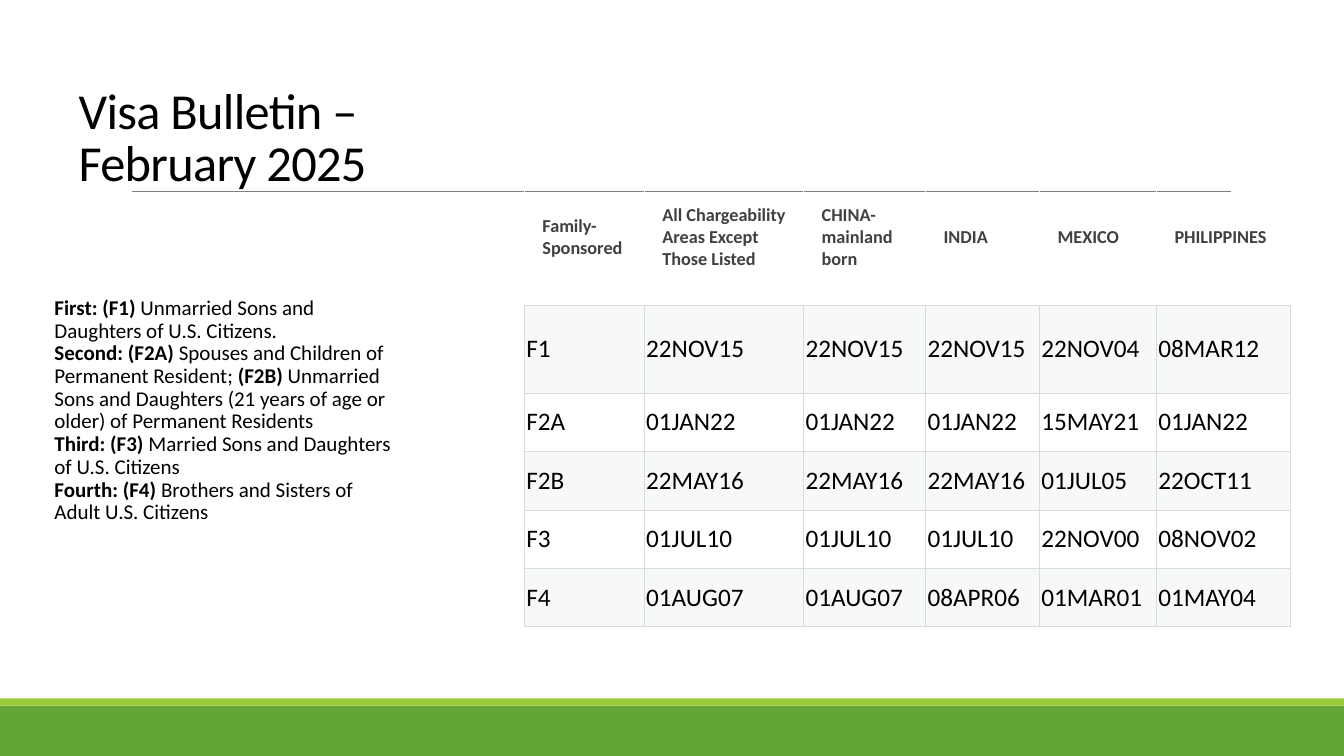
from pptx import Presentation
from pptx import util as u
from pptx.dml.color import RGBColor
from pptx.enum import shapes, text
from pptx.oxml.ns import qn
from lxml import etree

HUES = {"green": "63A537", "lime": "99CB38", "rule": "808080", "ink": "000000",
        "head": "404040", "edge": "D8DCDC", "band": "D8DEDC"}

COLS = [1.19, 1.58, 1.21, 1.13, 1.16, 1.33]
ROWS = [1.35, 0.87, 0.58, 0.58, 0.58, 0.58]
DATES = [
    ["Family-\vSponsored", "All Chargeability\vAreas Except\vThose Listed",
     "CHINA-mainland\vborn", "INDIA", "MEXICO", "PHILIPPINES"],
    ["F1", "22NOV15", "22NOV15", "22NOV15", "22NOV04", "08MAR12"],
    ["F2A", "01JAN22", "01JAN22", "01JAN22", "15MAY21", "01JAN22"],
    ["F2B", "22MAY16", "22MAY16", "22MAY16", "01JUL05", "22OCT11"],
    ["F3", "01JUL10", "01JUL10", "01JUL10", "22NOV00", "08NOV02"],
    ["F4", "01AUG07", "01AUG07", "08APR06", "01MAR01", "01MAY04"],
]
GROUPS = [
    [("First: (F1)", True), (" Unmarried Sons and Daughters of U.S. Citizens.", False)],
    [("Second: (F2A)", True), (" Spouses and Children of Permanent Resident; ", False),
     ("(F2B)", True),
     (" Unmarried Sons and Daughters (21 years of age or older) of Permanent Residents", False)],
    [("Third: (F3)", True), (" Married Sons and Daughters of U.S. Citizens", False)],
    [("Fourth: (F4)", True), (" Brothers and Sisters of Adult U.S. Citizens", False)],
]


def color(name):
    return RGBColor.from_string(HUES[name])


def write(frame, paras, size, hue="ink", space=1.0, track=0):
    frame.word_wrap = True
    for i, parts in enumerate(paras):
        para = frame.paragraphs[0] if i == 0 else frame.add_paragraph()
        para.alignment = text.PP_ALIGN.LEFT
        para.line_spacing = space
        para.space_before = para.space_after = u.Pt(0)
        for words, bold in parts:
            for j, line in enumerate(words.split("\v")):
                if j:
                    para.add_line_break()
                run = para.add_run()
                run.text = line
                run.font.name = "Calibri"
                run.font.size = u.Pt(size)
                run.font.bold = bold
                run.font.color.rgb = color(hue)
                if track:
                    run.font._element.set("spc", str(track))


def inset(item, left, top, right, bottom):
    item.margin_left, item.margin_top = u.Inches(left), u.Inches(top)
    item.margin_right, item.margin_bottom = u.Inches(right), u.Inches(bottom)


def add_bar(slide, box, hue):
    bar = slide.shapes.add_shape(shapes.MSO_SHAPE.RECTANGLE, *map(u.Inches, box))
    bar.shadow.inherit = False
    bar.fill.solid()
    bar.fill.fore_color.rgb = color(hue)
    bar.line.fill.background()


def add_rule(slide, left, right, y):
    rule = slide.shapes.add_connector(
        shapes.MSO_CONNECTOR.STRAIGHT, *map(u.Inches, (left, y, right, y)))
    rule.line.color.rgb = color("rule")
    rule.line.width = u.Pt(0.5)
    etree.SubElement(rule._element.spPr, qn("a:effectLst"))


def add_title(slide, box):
    title = slide.shapes.title
    title.left, title.top, title.width, title.height = map(u.Inches, box)
    frame = title.text_frame
    frame.auto_size = text.MSO_AUTO_SIZE.NONE
    frame.vertical_anchor = text.MSO_ANCHOR.BOTTOM
    write(frame, [[("Visa Bulletin – February 2025", False)]], 36, space=0.85, track=-50)


def add_groups(slide, box):
    frame = slide.shapes.add_textbox(*map(u.Inches, box)).text_frame
    inset(frame, 0, 0.05, 0, 0.05)
    write(frame, GROUPS, 15, space=0.9)


def add_edges(cell, sides):
    props = cell._tc.get_or_add_tcPr()
    for side in sides:
        line = etree.SubElement(props, qn("a:ln" + side), w=str(u.Pt(0.75)))
        fill = etree.SubElement(line, qn("a:solidFill"))
        etree.SubElement(fill, qn("a:srgbClr"), val=HUES["edge"])


def shade(cell, banded):
    if not banded:
        cell.fill.background()
        return
    cell.fill.solid()
    cell.fill.fore_color.rgb = color("band")
    tint = cell._tc.tcPr.find(qn("a:solidFill"))[0]
    etree.SubElement(tint, qn("a:alpha"), val="20000")


def add_dates(slide, left, top):
    box = map(u.Inches, (left, top, sum(COLS), sum(ROWS)))
    table = slide.shapes.add_table(len(ROWS), len(COLS), *box).table
    table.first_row = table.horz_banding = False
    for col, width in zip(table.columns, COLS):
        col.width = u.Inches(width)
    for r, (row, high) in enumerate(zip(table.rows, ROWS)):
        row.height = u.Inches(high)
        head = r == 0
        for cell, words in zip(row.cells, DATES[r]):
            cell.vertical_anchor = text.MSO_ANCHOR.MIDDLE
            inset(cell, *((0.18, 0.09, 0.01, 0.09) if head else (0.02,) * 4))
            write(cell.text_frame, [[(words, head)]],
                  13 if head else 18, "head" if head else "ink")
            add_edges(cell, "B" if head else "LRTB")
            shade(cell, r % 2 == 1)


def main():
    deck = Presentation()
    deck.slide_width, deck.slide_height = u.Inches(13.33), u.Inches(7.5)
    slide = deck.slides.add_slide(deck.slide_layouts.get_by_name("Title Only"))
    add_bar(slide, (0, 7, 13.33, 0.5), "green")
    add_bar(slide, (0, 6.93, 13.33, 0.07), "lime")
    add_rule(slide, 1.31, 12.21, 1.9)
    add_title(slide, (0.68, -0.35, 3.37, 2.3))
    add_groups(slide, (0.54, 2.9, 3.37, 3.65))
    add_dates(slide, 5.2, 1.68)
    deck.save("out.pptx")


if __name__ == "__main__":
    main()
